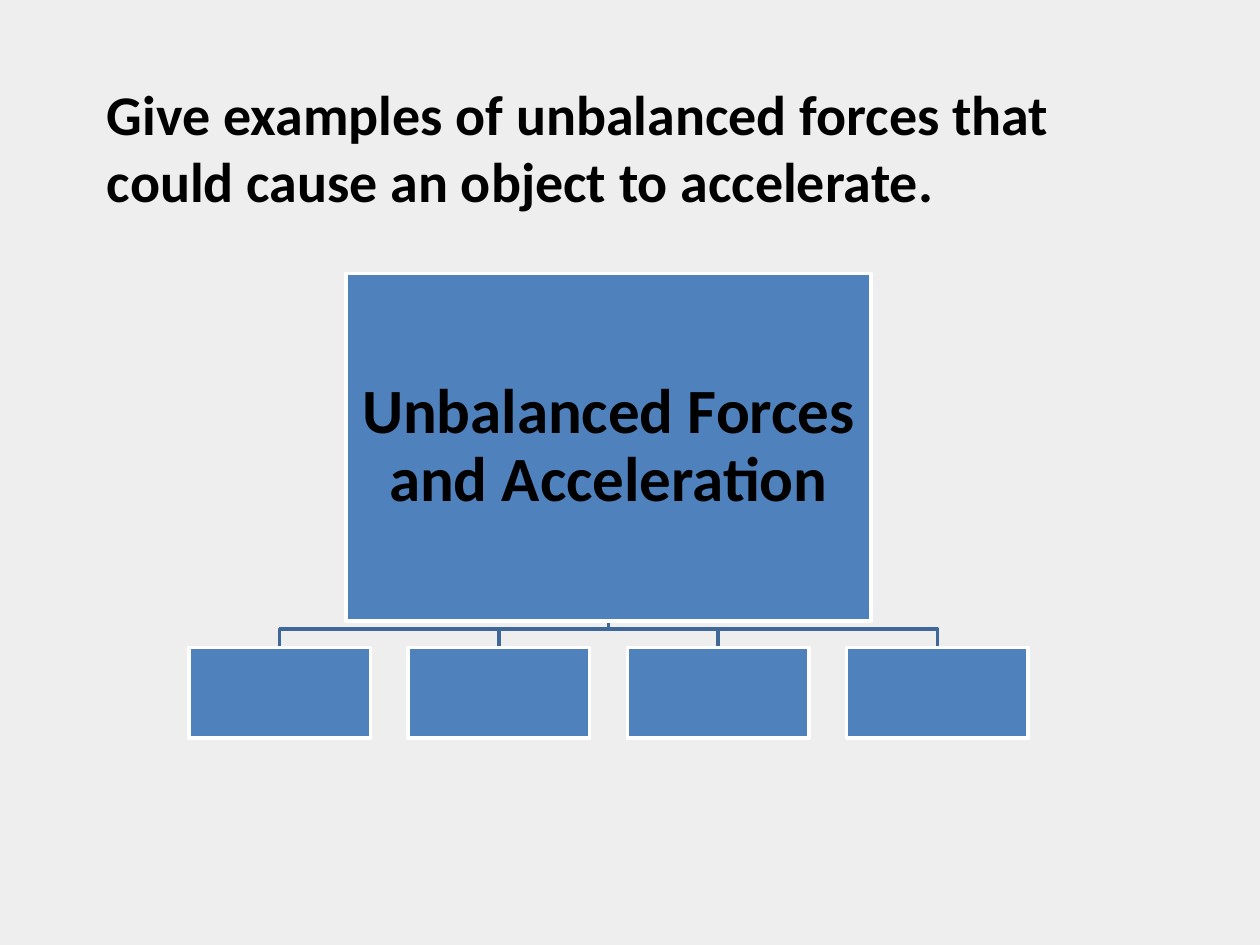
"""Build a slide with a tree of unbalanced forces and acceleration."""
from pptx import Presentation
from pptx.dml.color import RGBColor
from pptx.enum.shapes import MSO_SHAPE
from pptx.enum.text import MSO_ANCHOR, MSO_AUTO_SIZE, PP_ALIGN
from pptx.util import Pt


def paint(part, color):
    part.solid()
    part.fore_color.rgb = RGBColor.from_string(color)


def write(shape, text, size, frame_look, para_look):
    frame = shape.text_frame
    for name, value in frame_look.items():
        setattr(frame, name, value)
    para = frame.paragraphs[0]
    for name, value in para_look.items():
        setattr(para, name, value)
    run = para.add_run()
    run.text = text
    font = {"name": "Calibri", "size": Pt(size), "bold": True}
    for name, value in font.items():
        setattr(run.font, name, value)
    paint(run.font.fill, "000000")


deck = Presentation()
deck.slide_width, deck.slide_height = Pt(720), Pt(540)
slide = deck.slides.add_slide(deck.slide_layouts[6])
paint(slide.background.fill, "EEEEEE")
shapes = slide.shapes

count, left, step = 4, 108, 125.28
wide, high, top = 103.68, 51.84, 370
root_wide, root_high, root_top = 300.24, 198.5, 156.24
mid = left + ((count - 1) * step + wide) / 2
base, bar = root_top + root_high, 359.5
lefts = [left + i * step for i in range(count)]

for x in lefts:
    end = x + wide / 2
    path = shapes.build_freeform(Pt(mid), Pt(base))
    path.add_line_segments(
        [(Pt(mid), Pt(bar)), (Pt(end), Pt(bar)), (Pt(end), Pt(top))], close=False
    )
    branch = path.convert_to_shape()
    branch.shadow.inherit = False
    branch.fill.background()
    paint(branch.line.fill, "3F6797")
    branch.line.width = Pt(2)

spots = [(mid - root_wide / 2, root_top, root_wide, root_high)]
spots += [(x, top, wide, high) for x in lefts]
boxes = []
for spot in spots:
    box = shapes.add_shape(MSO_SHAPE.RECTANGLE, *map(Pt, spot))
    box.shadow.inherit = False
    paint(box.fill, "4F81BD")
    paint(box.line.fill, "FFFFFF")
    box.line.width = Pt(2)
    boxes.append(box)

inset = {f"margin_{side}": Pt(2) for side in ("left", "top", "right", "bottom")}
write(
    boxes[0], "Unbalanced Forces and Acceleration", 36,
    {"word_wrap": True, "vertical_anchor": MSO_ANCHOR.MIDDLE, **inset},
    {"alignment": PP_ALIGN.CENTER, "line_spacing": 0.9},
)
title = shapes.add_textbox(Pt(54), Pt(41.76), Pt(606.24), Pt(84.96))
write(
    title,
    "Give examples of unbalanced forces that could cause an object to accelerate.", 32,
    {"word_wrap": True, "auto_size": MSO_AUTO_SIZE.SHAPE_TO_FIT_TEXT},
    {"alignment": PP_ALIGN.LEFT},
)
deck.save("out.pptx")
